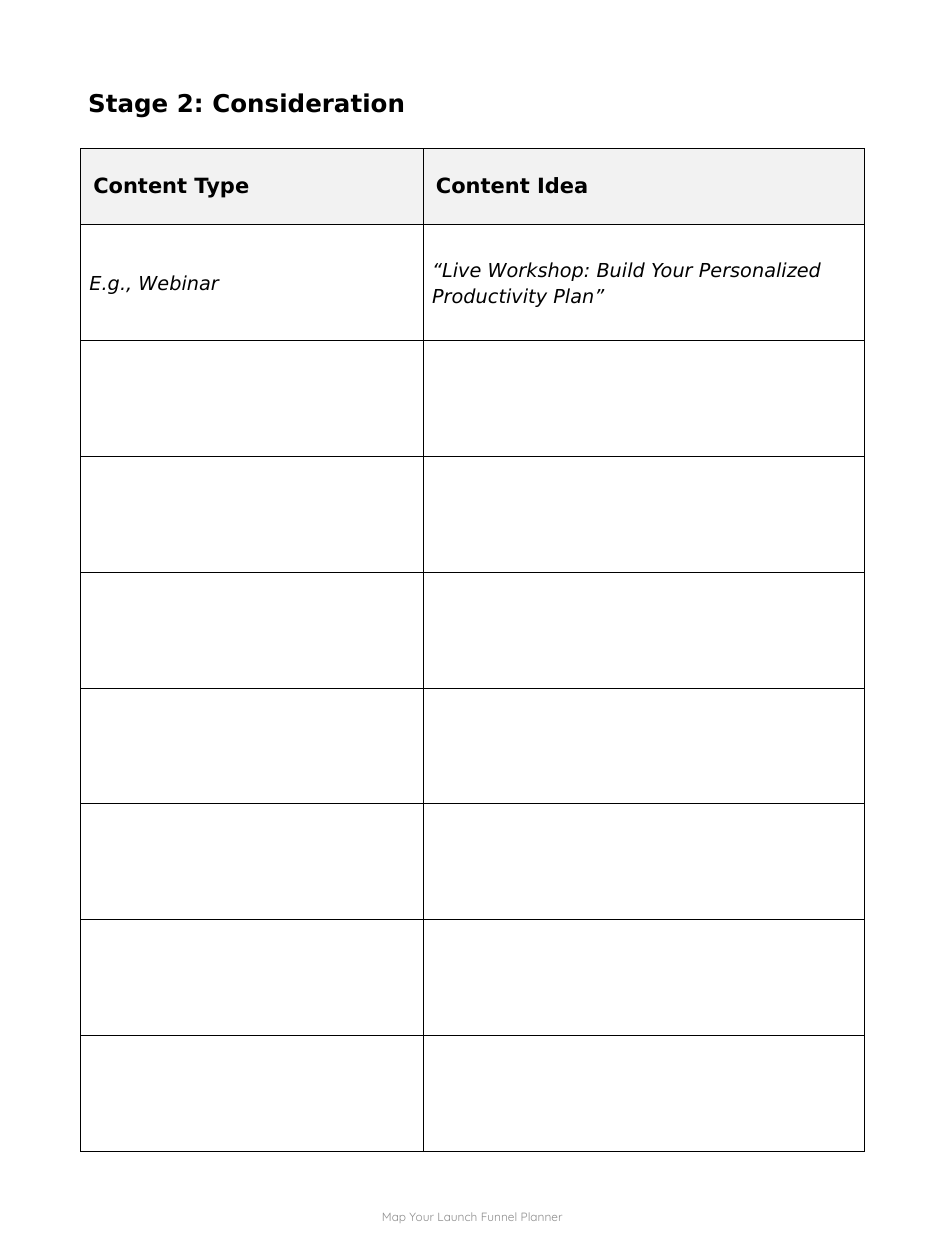
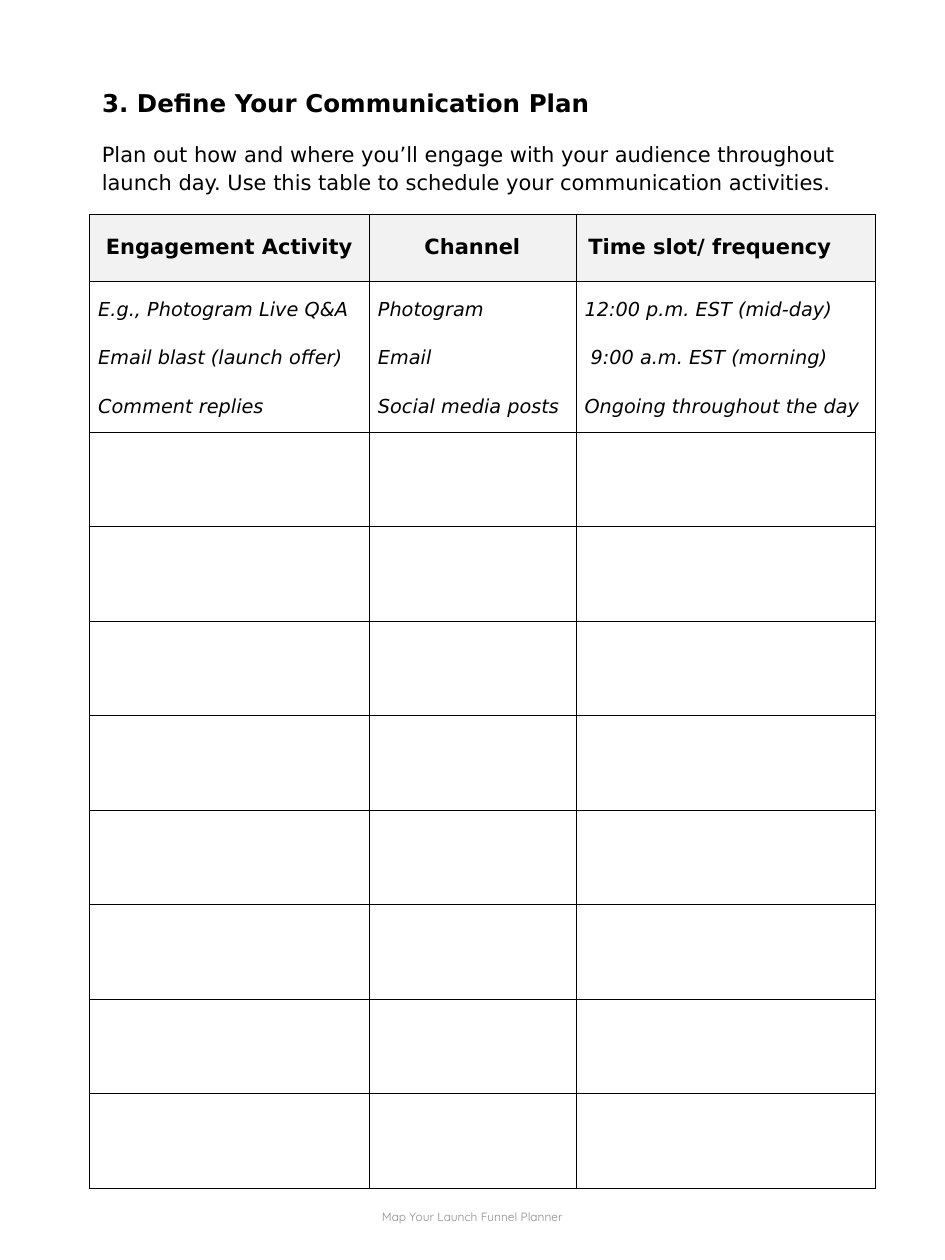
from lxml.etree import SubElement
from pptx import Presentation
from pptx.dml.color import RGBColor
from pptx.enum.text import MSO_ANCHOR, MSO_AUTO_SIZE, PP_ALIGN
from pptx.oxml.ns import qn
from pptx.util import Inches, Pt

PAGE_WIDTH, PAGE_HEIGHT = 7.5, 10
BODY_FONT, FOOTER_FONT = "DejaVu Sans", "Quicksand"
BLACK, HEADER_GREY, FOOTER_GREY = "000000", "F2F2F2", "8C8C8C"
TITLE_TOP, TITLE_HEIGHT = 0.61, 0.34
FOOTER_TEXT = "Map Your Launch Funnel Planner"
BORDER_WIDTH = Pt(0.25)
LEFT, CENTER = PP_ALIGN.LEFT, PP_ALIGN.CENTER


def color(hex_string):
    return RGBColor.from_string(hex_string)


def write(frame, lines, size, name=BODY_FONT, fill=BLACK, bold=False, italic=False,
          align=LEFT, line_spacing=None, before=0, after=0):
    """Fill a text frame with equally formatted paragraphs."""
    frame.word_wrap = True
    for index, line in enumerate(lines):
        paragraph = frame.add_paragraph() if index else frame.paragraphs[0]
        paragraph.text = line
        paragraph.alignment = align
        paragraph.line_spacing = line_spacing
        paragraph.space_before = Pt(before if index else 0)
        paragraph.space_after = Pt(after)
        font = paragraph.font
        font.name, font.size = name, Pt(size)
        font.bold, font.italic = bold, italic
        font.color.rgb = color(fill)


def place(shape, left, top, width, height):
    shape.left, shape.top = Inches(left), Inches(top)
    shape.width, shape.height = Inches(width), Inches(height)


def add_text(slide, box, lines, size, anchor=MSO_ANCHOR.TOP, **style):
    frame = slide.shapes.add_textbox(*map(Inches, box)).text_frame
    frame.vertical_anchor = anchor
    write(frame, lines, size, **style)


def add_page(presentation, title, left, width):
    """Add a slide with the shared title style and footer."""
    slide = presentation.slides.add_slide(presentation.slide_layouts[5])
    place(slide.shapes.title, left, TITLE_TOP, width, TITLE_HEIGHT)
    frame = slide.shapes.title.text_frame
    frame.auto_size = MSO_AUTO_SIZE.NONE
    frame.vertical_anchor = MSO_ANCHOR.TOP
    write(frame, [title], 14, bold=True, line_spacing=1.15, after=12)
    footer_width = 2.53
    add_text(slide, ((PAGE_WIDTH - footer_width) / 2, 9.39, footer_width, 0.53),
             [FOOTER_TEXT], 6.8, anchor=MSO_ANCHOR.MIDDLE, name=FOOTER_FONT,
             fill=FOOTER_GREY, align=CENTER)
    return slide


def add_borders(cell):
    properties = cell._tc.get_or_add_tcPr()
    for side in ("lnL", "lnR", "lnT", "lnB"):
        line = SubElement(properties, qn(f"a:{side}"), w=str(BORDER_WIDTH))
        fill = SubElement(line, qn("a:solidFill"))
        SubElement(fill, qn("a:srgbClr"), val=BLACK)


def add_planner(slide, left, top, columns, headers, examples, header_height,
                example_height, blank_height, blank_count=0):
    """Add a table: headers as (text, alignment), one example row, then blank rows."""
    heights = [header_height, example_height] + [blank_height] * blank_count
    box = map(Inches, (left, top, sum(columns), sum(heights)))
    table = slide.shapes.add_table(len(heights), len(columns), *box).table
    table.horz_banding = False
    for column, width in zip(table.columns, columns):
        column.width = Inches(width)
    for row, height in zip(table.rows, heights):
        row.height = Inches(height)
    for cell in table.iter_cells():
        add_borders(cell)
        cell.fill.background()
        cell.vertical_anchor = MSO_ANCHOR.MIDDLE
    for index, ((header, align), lines) in enumerate(zip(headers, examples)):
        head, example = table.cell(0, index), table.cell(1, index)
        head.fill.solid()
        head.fill.fore_color.rgb = color(HEADER_GREY)
        write(head.text_frame, [header], 12, bold=True, align=align)
        example.margin_left = example.margin_right = Inches(0.07)
        example.margin_top = example.margin_bottom = 0
        write(example.text_frame, lines, 11, italic=True, line_spacing=1.15,
              before=1.1, after=12)


def add_consideration_page(presentation):
    slide = add_page(presentation, "Stage 2: Consideration", 0.6, 6.33)
    add_planner(
        slide, 0.64, 1.18, [2.72, 3.5],
        [("Content Type", LEFT), ("Content Idea", LEFT)],
        [["E.g., Webinar"],
         ["“Live Workshop: Build Your Personalized Productivity Plan”"]],
        header_height=0.6, example_height=0.92, blank_height=0.92, blank_count=7)


def add_communication_page(presentation):
    left, width = 0.71, 6.39
    slide = add_page(presentation, "3. Define Your Communication Plan", left, width)
    add_text(slide, (left, 1.04, width, 0.55),
             ["Plan out how and where you’ll engage with your audience throughout "
              "launch day. Use this table to schedule your communication activities."],
             12, line_spacing=1.15, after=12)
    add_planner(
        slide, left, 1.7, [2.22, 1.64, 2.38],
        [("Engagement Activity", CENTER), ("Channel", CENTER),
         ("Time slot/ frequency", LEFT)],
        [["E.g., Photogram Live Q&A", "Email blast (launch offer)", "Comment replies"],
         ["Photogram", "Email", "Social media posts"],
         ["12:00 p.m. EST (mid-day)", " 9:00 a.m. EST (morning)",
          "Ongoing throughout the day"]],
        header_height=0.53, example_height=1.2, blank_height=0.75, blank_count=8)


def main():
    presentation = Presentation()
    presentation.slide_width = Inches(PAGE_WIDTH)
    presentation.slide_height = Inches(PAGE_HEIGHT)
    add_consideration_page(presentation)
    add_communication_page(presentation)
    presentation.save("out.pptx")


if __name__ == "__main__":
    main()
